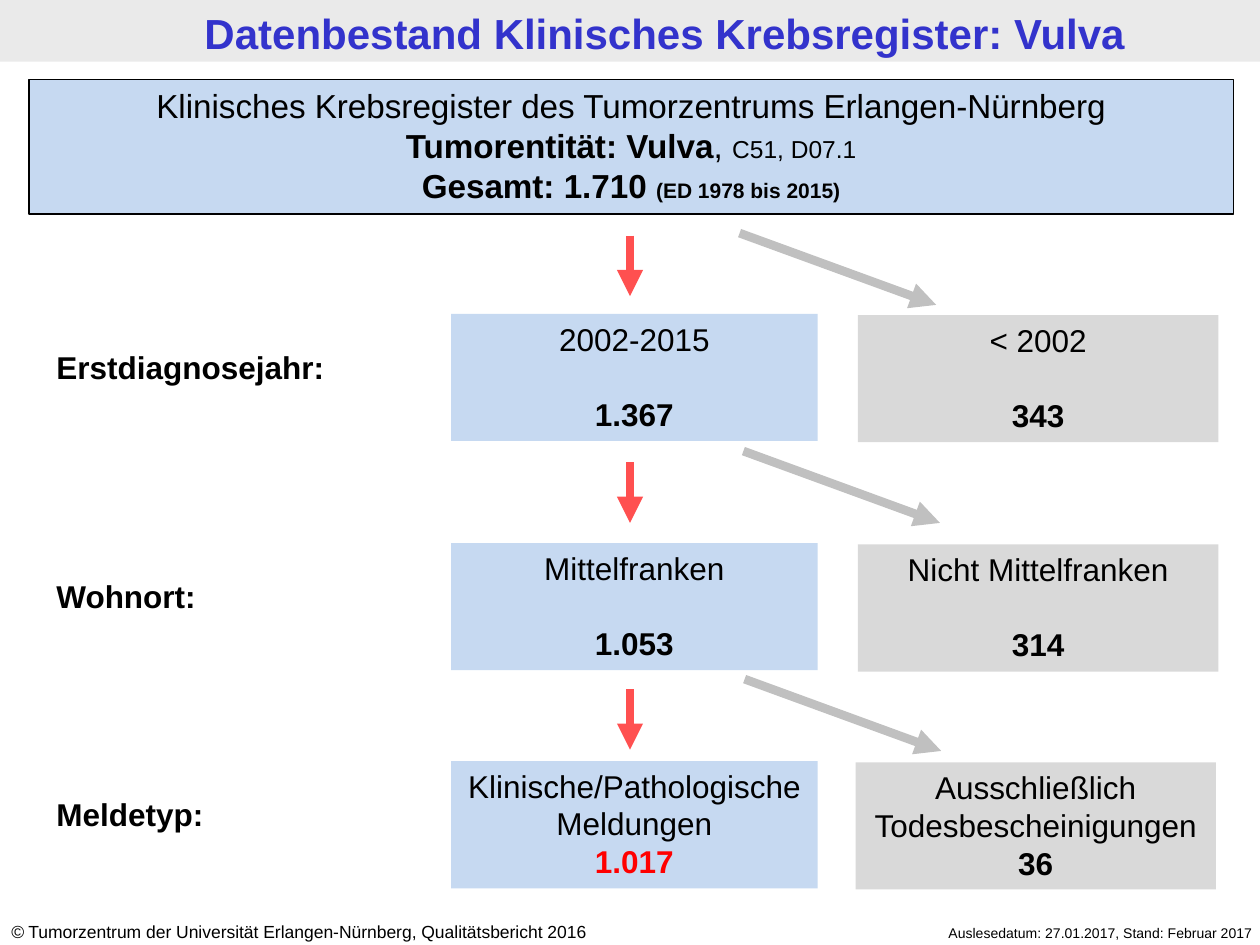
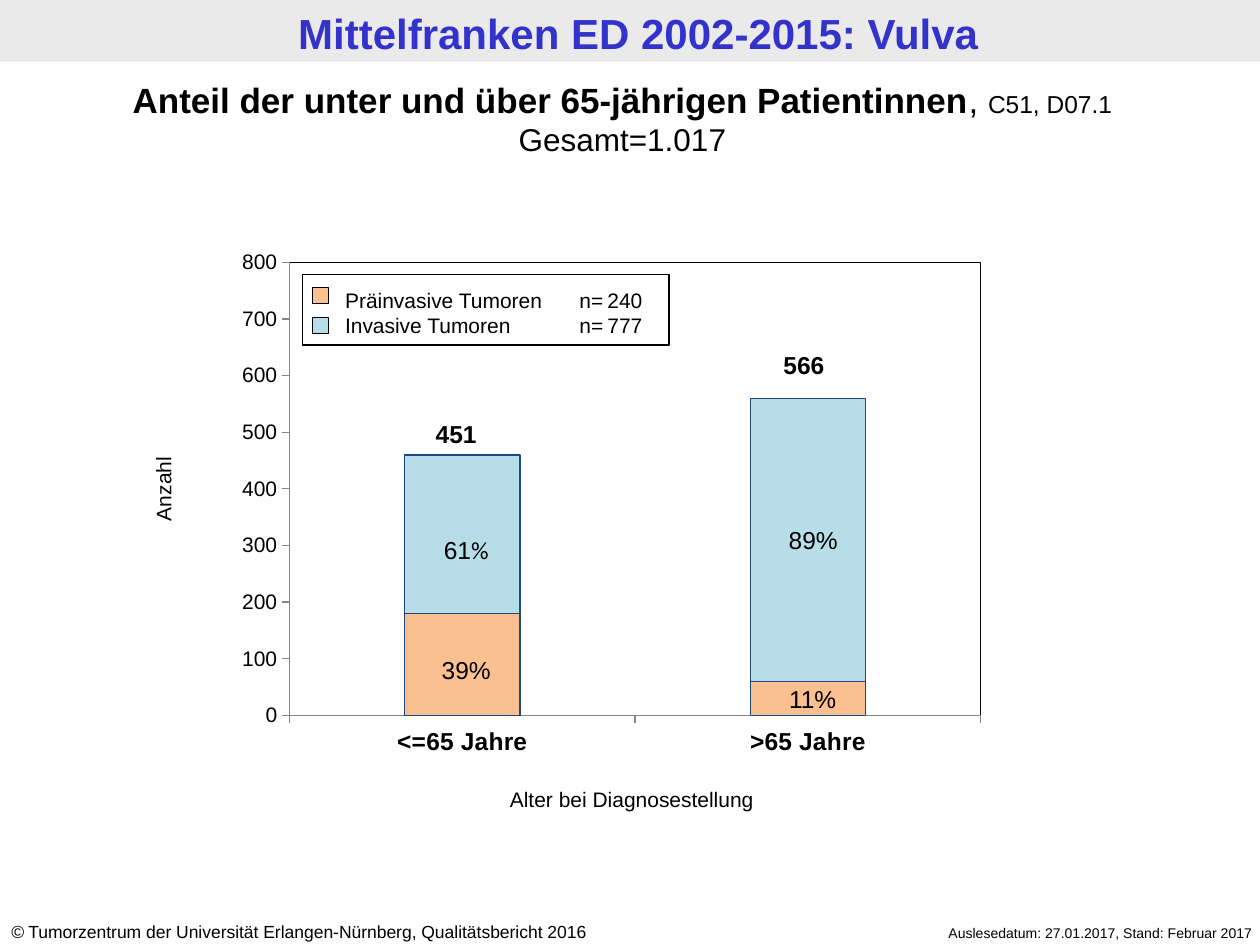
import dataclasses

import lxml.etree
import pptx
import pptx.chart.data
import pptx.dml.color
import pptx.enum.chart
import pptx.enum.shapes
import pptx.enum.text
import pptx.oxml
import pptx.oxml.ns
import pptx.util

Inches = pptx.util.Inches
Pt = pptx.util.Pt
RGB = pptx.dml.color.RGBColor.from_string
ALIGN = pptx.enum.text.PP_ALIGN
ANCHOR = pptx.enum.text.MSO_ANCHOR
qn = pptx.oxml.ns.qn
RECT = pptx.enum.shapes.MSO_SHAPE.RECTANGLE


@dataclasses.dataclass(frozen=True)
class Theme:
    font: str = "Arial"
    percent_font: str = "Calibri"
    text: str = "000000"
    title: str = "3333CC"
    band: str = "EAEAEA"
    kept: str = "C6D9F1"
    excluded: str = "D9D9D9"
    result: str = "FF0000"
    kept_arrow: str = "FF5050"
    excluded_arrow: str = "C0C0C0"
    preinvasive: str = "FAC090"
    invasive: str = "B7DEE8"
    bar_line: str = "1F497D"
    axis: str = "868686"
    title_size: int = 24
    heading_size: int = 20
    register_size: int = 19
    body_size: int = 18
    label_size: int = 14
    small_size: int = 12
    copyright_size: int = 10
    date_size: int = 8


T = Theme()


def add_text(paras, s, at, size=T.body_size, bold=False, color=T.text, align=ALIGN.CENTER,
             fill=None, line=None, inset=0.1, gap=0, tabs=(), rotation=0):
    box = [Inches(v) for v in at]
    if fill or line:
        sp = s.shapes.add_shape(RECT, *box)
        sp.shadow.inherit = False
        if fill:
            sp.fill.solid()
            sp.fill.fore_color.rgb = RGB(fill)
        else:
            sp.fill.background()
        if line:
            sp.line.color.rgb = RGB(line)
            sp.line.width = Pt(0.75)
        else:
            sp.line.fill.background()
        sp.text_frame.vertical_anchor = ANCHOR.MIDDLE
        sp.text_frame.margin_bottom = Inches(0.07)
    else:
        sp = s.shapes.add_textbox(*box)
    sp.rotation = rotation
    tf = sp.text_frame
    tf.word_wrap = True
    tf.margin_left = Inches(inset)
    for i, runs in enumerate(paras):
        p = tf.paragraphs[0] if i == 0 else tf.add_paragraph()
        p.alignment = align
        if gap and i == len(paras) - 1:
            p.space_before = Pt(gap)
        if tabs:
            tab_list = lxml.etree.SubElement(p._p.get_or_add_pPr(), qn("a:tabLst"))
            for pos, side in tabs:
                lxml.etree.SubElement(tab_list, qn("a:tab"), pos=str(Inches(pos)), algn=side)
        for run in [runs] if isinstance(runs, str) else runs:
            words, fmt = (run, {}) if isinstance(run, str) else run
            r = p.add_run()
            r.text = words
            r.font.name = fmt.get("font", T.font)
            r.font.size = Pt(fmt.get("size", size))
            r.font.bold = fmt.get("bold", bold)
            r.font.italic = fmt.get("italic", False)
            r.font.color.rgb = RGB(fmt.get("color", color))


def add_arrow(s, x, y, dx, dy, color):
    c = s.shapes.add_connector(pptx.enum.shapes.MSO_CONNECTOR.STRAIGHT,
                               Inches(x), Inches(y), Inches(x + dx), Inches(y + dy))
    c.line.color.rgb = RGB(color)
    c.line.width = Pt(5)
    lxml.etree.SubElement(c.line._get_or_add_ln(), qn("a:tailEnd"), type="triangle")
    lxml.etree.SubElement(c._element.spPr, qn("a:effectLst"))


prs = pptx.Presentation()
prs.slide_width = Inches(10)
prs.slide_height = Inches(7.5)

slides = []
for title, inset in [("Datenbestand Klinisches Krebsregister: Vulva", 0.53),
                     ("Mittelfranken ED 2002-2015: Vulva", 0.11)]:
    s = prs.slides.add_slide(prs.slide_layouts[6])
    add_text([], s, (0, 0, 10, 0.49), fill=T.band)
    add_text([title], s, (0.06, 0.01, 10, 0.49), size=T.title_size, bold=True,
             color=T.title, inset=inset)
    add_text([[("©", {"italic": True}),
               " Tumorzentrum der Universität Erlangen-Nürnberg, Qualitätsbericht 2016"]],
             s, (-0.01, 7.26, 5.24, 0.27), size=T.copyright_size, align=ALIGN.LEFT)
    add_text(["Auslesedatum: 27.01.2017, Stand: Februar 2017"],
             s, (6.65, 7.29, 3.39, 0.24), size=T.date_size, align=ALIGN.RIGHT)
    slides.append(s)
flow, ages = slides

bold = {"bold": True}
codes = ("C51, D07.1", {"size": T.label_size})
add_text(["Klinisches Krebsregister des Tumorzentrums Erlangen-Nürnberg",
          [("Tumorentität: Vulva", bold), ", ", codes],
          [("Gesamt: 1.710 ", bold),
           ("(ED 1978 bis 2015)", {"bold": True, "size": T.small_size})]],
         flow, (0.23, 0.63, 9.56, 1.07), size=T.register_size, fill=T.kept, line=T.text)

steps = [
    ("Erstdiagnosejahr:", 2.49, "2002-2015", "1.367", T.text, "< 2002", "343", 6.81, 21.2),
    ("Wohnort:", 4.31, "Mittelfranken", "1.053", T.text,
     "Nicht Mittelfranken", "314", 6.81, 21.2),
    ("Meldetyp:", 6.04, "Klinische/Pathologische Meldungen", "1.017", T.result,
     "Ausschließlich Todesbescheinigungen", "36", 6.79, 0),
]
for label, y, kept, kept_n, kept_color, excluded, excluded_n, x, gap in steps:
    add_text([label], flow, (0.35, y + 0.22, 2.76, 0.4), bold=True, align=ALIGN.LEFT)
    add_text([kept, [(kept_n, {"bold": True, "color": kept_color})]],
             flow, (3.58, y, 2.91, 1.01), fill=T.kept, gap=gap)
    add_text([excluded, [(excluded_n, bold)]],
             flow, (x, y + 0.01, 2.86, 1.01), fill=T.excluded, gap=gap)

for i, (x, y) in enumerate([(5.87, 1.85), (5.9, 3.58), (5.91, 5.39)]):
    add_arrow(flow, 5, 1.87 + 1.8 * i, 0, 0.48, T.kept_arrow)
    add_arrow(flow, x, y, 1.56, 0.57, T.excluded_arrow)

groups = [("Präinvasive Tumoren", "240", (180, 60), T.preinvasive),
          ("Invasive Tumoren", "777", (280, 500), T.invasive)]
data = pptx.chart.data.CategoryChartData()
data.categories = ["<=65 Jahre", ">65 Jahre"]
for name, total, values, color in groups:
    data.add_series(name, values)
chart = ages.shapes.add_chart(pptx.enum.chart.XL_CHART_TYPE.COLUMN_STACKED, Inches(1.51),
                              Inches(1.42), Inches(6.98), Inches(4.66), data).chart
chart.has_legend = False
chart.has_title = False
chart.font.name = T.font
chart.font.size = Pt(T.body_size)
chart.font.color.rgb = RGB(T.text)
plot = chart.plots[0]
plot.gap_width = 200
plot.overlap = 100
plot.vary_by_categories = False
for series, group in zip(plot.series, groups):
    series.format.fill.solid()
    series.format.fill.fore_color.rgb = RGB(group[3])
    series.format.line.color.rgb = RGB(T.bar_line)
    series.format.line.width = Pt(0.75)
for axis, size, is_bold in [(chart.category_axis, T.label_size, True),
                            (chart.value_axis, T.small_size, False)]:
    axis.has_major_gridlines = False
    axis.major_tick_mark = pptx.enum.chart.XL_TICK_MARK.OUTSIDE
    axis.format.line.color.rgb = RGB(T.axis)
    axis.tick_labels.font.name = T.font
    axis.tick_labels.font.size = Pt(size)
    axis.tick_labels.font.bold = is_bold
    axis.tick_labels.font.color.rgb = RGB(T.text)
chart.value_axis.minimum_scale = 0
chart.value_axis.maximum_scale = 800
chart.value_axis.major_unit = 100

area = chart._chartSpace.chart.plotArea
for old in area.findall(qn("c:layout")):
    area.remove(old)
layout = lxml.etree.Element(qn("c:layout"))
manual = lxml.etree.SubElement(layout, qn("c:manualLayout"))
for tag, val in [("layoutTarget", "inner"), ("xMode", "edge"), ("yMode", "edge"),
                 ("x", "0.113"), ("y", "0.142"), ("w", "0.786"), ("h", "0.772")]:
    lxml.etree.SubElement(manual, qn("c:" + tag), val=val)
area.insert(0, layout)
frame = lxml.etree.SubElement(area, qn("c:spPr"))
lxml.etree.SubElement(frame, qn("a:noFill"))
ln = lxml.etree.SubElement(frame, qn("a:ln"), w=str(Pt(0.75)))
solid = lxml.etree.SubElement(ln, qn("a:solidFill"))
lxml.etree.SubElement(solid, qn("a:srgbClr"), val=T.text)

add_text([[("Anteil der unter und über 65-jährigen Patientinnen", bold), ", ", codes],
          [("Gesamt=1.017", {"size": T.body_size})]],
         ages, (0, 0.57, 9.88, 0.74), size=T.heading_size)
for runs, x, y, w, is_bold in [
    ("451", 3.11, 3.28, 1.02, True),
    ("566", 5.87, 2.73, 1.02, True),
    (["61", ("%", {"font": T.percent_font})], 3.19, 4.2, 1.02, False),
    ("39%", 3.19, 5.15, 1.02, False),
    ("89%", 5.86, 4.12, 1.19, False),
    ("11%", 5.94, 5.38, 1.02, False),
]:
    add_text([runs], ages, (x, y, w, 0.34), size=T.label_size, bold=is_bold)
add_text(["Alter bei Diagnosestellung"], ages, (3.35, 6.19, 3.33, 0.3), size=T.small_size)
add_text(["Anzahl"], ages, (-0.01, 3.73, 2.61, 0.3), size=T.small_size, rotation=270)

add_text([], ages, (2.4, 2.18, 2.91, 0.56), line=T.text)
add_text([f"{name}\tn=\t{total}" for name, total, values, color in groups],
         ages, (2.64, 2.23, 2.68, 0.5), size=T.small_size, align=ALIGN.LEFT,
         tabs=[(1.86, "l"), (2.36, "r")])
for i, group in enumerate(groups):
    add_text([], ages, (2.48, 2.28 + 0.24 * i, 0.13, 0.13), fill=group[3], line=T.text)

prs.save("out.pptx")
